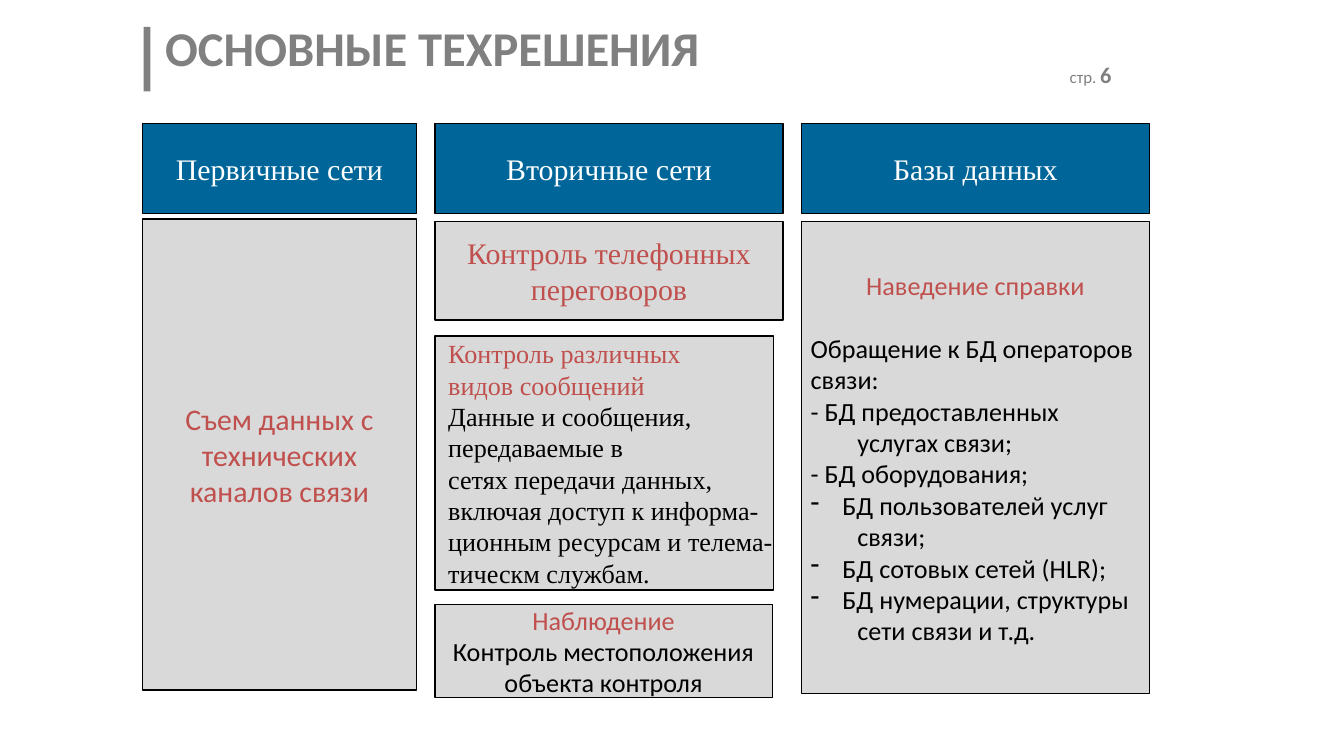
from collections import namedtuple
from dataclasses import dataclass

from lxml.etree import SubElement
from pptx import Presentation
from pptx.dml.color import RGBColor as Rgb
from pptx.enum.shapes import MSO_SHAPE as Shape
from pptx.enum.text import MSO_ANCHOR as Anchor, MSO_AUTO_SIZE as Fit, PP_ALIGN as Align
from pptx.oxml.ns import qn
from pptx.util import Pt


@dataclass(frozen=True)
class Theme:
    gray: Rgb = Rgb(0x80, 0x80, 0x80)
    blue: Rgb = Rgb(0x00, 0x66, 0x99)
    pale: Rgb = Rgb(0xD9, 0xD9, 0xD9)
    red: Rgb = Rgb(0xC0, 0x50, 0x4D)
    black: Rgb = Rgb(0, 0, 0)
    white: Rgb = Rgb(255, 255, 255)
    sans: str = "Calibri"
    serif: str = "Times New Roman"
    title: float = 26
    head: float = 16
    body: float = 14
    page: float = 12
    note: float = 9


T = Theme()
Box = namedtuple("Box", "x y w h")
Line = namedtuple("Line", "text color align kind", defaults=(T.black, Align.LEFT, ""))
Card = namedtuple("Card", "box font size lines wrap", defaults=(False,))
Column = namedtuple("Column", "name width cards")

TOP, LEFT, GAP, HEAD = 66.2, 76.3, 9.8, 48.2
HANG, INSET, SPACE = 17, 25, 17


def center(color, *texts):
    return [Line(text, color, Align.CENTER) for text in texts]


def plain(*texts):
    return [Line(text) for text in texts]


COLUMNS = [
    Column("Первичные сети", 146.9, [
        Card(Box(0, 51.2, 146.9, 252.2), T.sans, T.head,
             center(T.red, "Съем данных с", "технических", "каналов связи")),
    ]),
    Column("Вторичные сети", 186.5, [
        Card(Box(0, 52.6, 186.5, 52.6), T.serif, T.head,
             center(T.red, "Контроль телефонных", "переговоров")),
        Card(Box(0, 113.8, 181.4, 136.1), T.serif, T.body, [
            Line("Контроль различных", T.red),
            Line("видов сообщений", T.red),
            *plain("Данные и сообщения,", "передаваемые в",
                   "сетях передачи данных,", "включая доступ к информа-",
                   "ционным ресурсам и телема-", "тическм службам."),
        ]),
        Card(Box(0, 257.8, 180.7, 49.7), T.sans, T.body,
             center(T.red, "Наблюдение")
             + center(T.black, "Контроль местоположения", "объекта контроля")),
    ]),
    Column("Базы данных", 186.5, [
        Card(Box(0, 52.6, 186.5, 252.7), T.sans, T.body, [
            *center(T.red, "Наведение справки"),
            Line("Обращение к БД операторов", kind="gap"),
            *plain("связи:", "- БД предоставленных"),
            Line("услугах связи;", kind="inset"),
            *plain("- БД оборудования;"),
            Line("БД пользователей услуг", kind="bullet"),
            Line("связи;", kind="inset"),
            Line("БД сотовых сетей (HLR);", kind="bullet"),
            Line("БД нумерации, структуры", kind="bullet"),
            Line("сети связи и т.д.", kind="inset"),
        ], True),
    ]),
]


def place(box):
    return [Pt(v) for v in box]


def add_run(para, text, font, size, color, bold=False):
    run = para.add_run()
    run.text = text
    run.font.name = font
    run.font.size = Pt(size)
    run.font.bold = bold
    run.font.color.rgb = color


def add_rect(slide, box, fill, edge=None):
    rect = slide.shapes.add_shape(Shape.RECTANGLE, *place(box))
    rect.shadow.inherit = False
    rect.fill.solid()
    rect.fill.fore_color.rgb = fill
    if edge is None:
        rect.line.fill.background()
    else:
        rect.line.color.rgb = edge
        rect.line.width = Pt(0.75)
    return rect


def set_kind(para, kind):
    props = para._p.get_or_add_pPr()
    if kind == "bullet":
        props.set("marL", str(Pt(HANG)))
        props.set("indent", str(-Pt(HANG)))
        SubElement(props, qn("a:buChar")).set("char", "-")
    elif kind == "inset":
        props.set("marL", str(Pt(INSET)))
    elif kind == "gap":
        para.space_before = Pt(SPACE)


def add_card(slide, box, fill, card):
    frame = add_rect(slide, box, fill, T.black).text_frame
    frame.word_wrap = card.wrap
    frame.vertical_anchor = Anchor.MIDDLE
    if card.wrap:
        frame.margin_left = frame.margin_right = Pt(5)
    for i, line in enumerate(card.lines):
        para = frame.add_paragraph() if i else frame.paragraphs[0]
        para.alignment = line.align
        set_kind(para, line.kind)
        add_run(para, line.text, card.font, card.size, line.color)


def add_column(slide, box, column):
    head = Card(box, T.serif, T.head, center(T.white, column.name))
    add_card(slide, box, T.blue, head)
    for card in column.cards:
        x, y, w, h = card.box
        add_card(slide, Box(box.x + x, box.y + y, w, h), T.pale, card)


def add_header(slide, box):
    add_rect(slide, Box(box.x, box.y, 3.6, box.h), T.gray)
    title = slide.shapes.title
    title.left, title.top, title.width, title.height = place(
        Box(box.x + 5, box.y + 0.7, 350.6, 30.2))
    page = slide.shapes.add_textbox(*place(
        Box(box.x + box.w - 167.8, box.y + 15.1, 167.8, 21.6)))
    for shape in (title, page):
        frame = shape.text_frame
        frame.word_wrap = True
        frame.auto_size = Fit.NONE
        frame.vertical_anchor = Anchor.TOP
        frame.margin_left = frame.margin_right = Pt(6.5)
        frame.margin_top = frame.margin_bottom = Pt(3.2)
    para = title.text_frame.paragraphs[0]
    para.alignment = Align.LEFT
    para.line_spacing = 0.7
    add_run(para, "ОСНОВНЫЕ ТЕХРЕШЕНИЯ", T.sans, T.title, T.gray, True)
    para = page.text_frame.paragraphs[0]
    para.alignment = Align.RIGHT
    add_run(para, "стр. ", T.sans, T.note, T.gray)
    add_run(para, "6", T.sans, T.page, T.gray, True)


def main():
    deck = Presentation()
    deck.slide_width, deck.slide_height = Pt(720), Pt(405)
    slide = deck.slides.add_slide(deck.slide_layouts.get_by_name("Title Only"))
    add_header(slide, Box(77, 14.4, 525, 34.6))
    left = LEFT
    for column in COLUMNS:
        add_column(slide, Box(left, TOP, column.width, HEAD), column)
        left += column.width + GAP
    deck.save("out.pptx")


if __name__ == "__main__":
    main()
